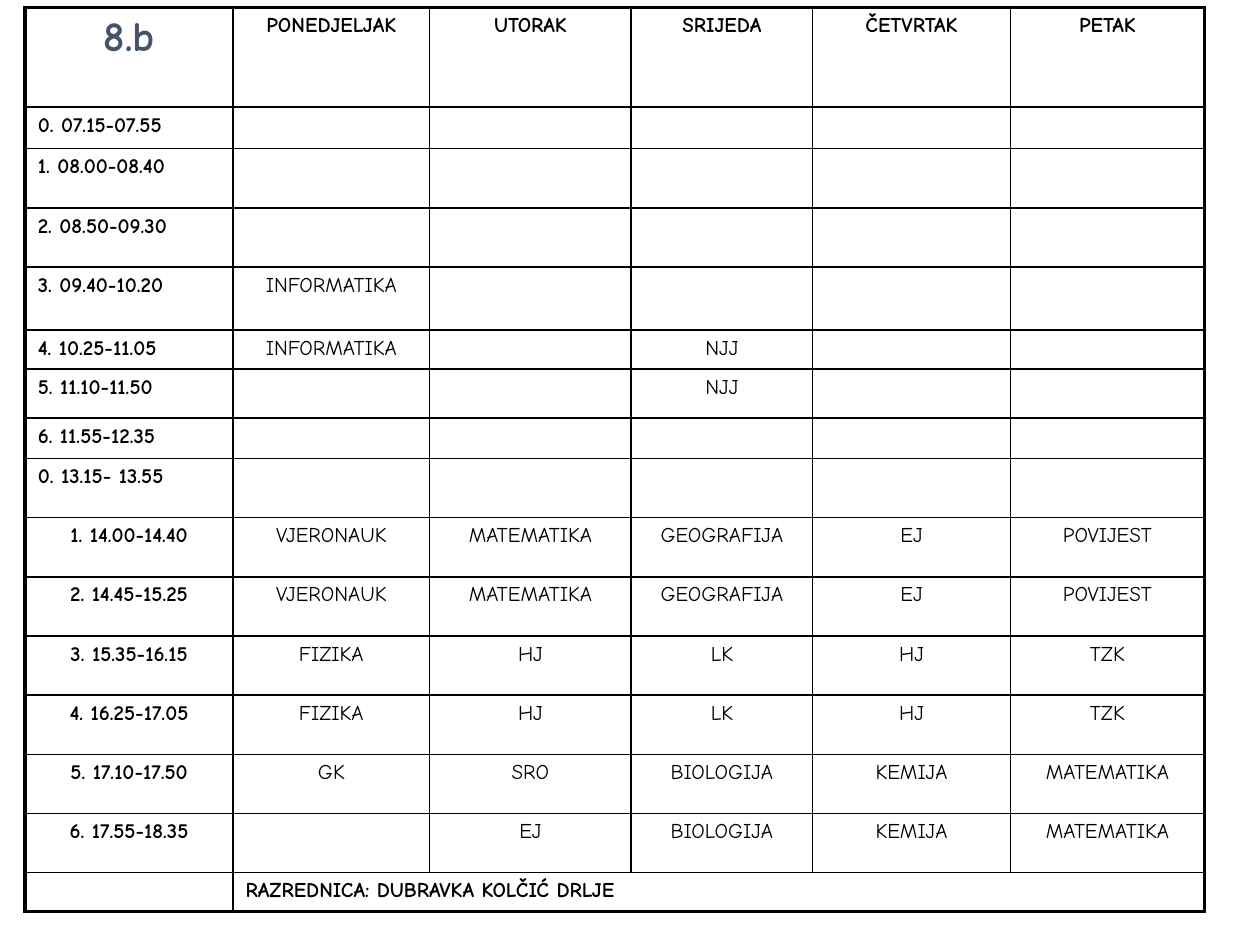
from lxml import etree
from pptx import Presentation
from pptx import util as u
from pptx.dml.color import RGBColor
from pptx.enum import text
from pptx.oxml import ns

FONT = "Comic Neue"
BLACK = "000000"
SLATE = "44546A"
THIN, THICK = 1, 2.25

COLUMN_WIDTHS = [1.65, 1.56, 1.6, 1.44, 1.57, 1.54]
ROW_HEIGHTS = [0.79, 0.33, 0.47, 0.47, 0.5, 0.31, 0.39, 0.32] + [0.47] * 7 + [0.31]

TIMETABLE = [
    ["8.b", "PONEDJELJAK", "UTORAK", "SRIJEDA", "ČETVRTAK", "PETAK"],
    ["0. 07.15-07.55", "", "", "", "", ""],
    ["1. 08.00-08.40", "", "", "", "", ""],
    ["2. 08.50-09.30", "", "", "", "", ""],
    ["3. 09.40-10.20", "INFORMATIKA", "", "", "", ""],
    ["4. 10.25-11.05", "INFORMATIKA", "", "NJJ", "", ""],
    ["5. 11.10-11.50", "", "", "NJJ", "", ""],
    ["6. 11.55-12.35", "", "", "", "", ""],
    ["0. 13.15- 13.55", "", "", "", "", ""],
    ["1. 14.00-14.40", "VJERONAUK", "MATEMATIKA", "GEOGRAFIJA", "EJ", "POVIJEST"],
    ["2. 14.45-15.25", "VJERONAUK", "MATEMATIKA", "GEOGRAFIJA", "EJ", "POVIJEST"],
    ["3. 15.35-16.15", "FIZIKA", "HJ", "LK", "HJ", "TZK"],
    ["4. 16.25-17.05", "FIZIKA", "HJ", "LK", "HJ", "TZK"],
    ["5. 17.10-17.50", "GK", "SRO", "BIOLOGIJA", "KEMIJA", "MATEMATIKA"],
    ["6. 17.55-18.35", "", "EJ", "BIOLOGIJA", "KEMIJA", "MATEMATIKA"],
    ["", "RAZREDNICA: DUBRAVKA KOLČIĆ DRLJE", "", "", "", ""],
]
LAST_ROW = len(TIMETABLE) - 1
LAST_COLUMN = len(COLUMN_WIDTHS) - 1
FIRST_AFTERNOON_LESSON = 9


def color(hex_string):
    return RGBColor.from_string(hex_string)


class TimetableSlide:
    def __init__(self, presentation, font):
        self.slide = presentation.slides.add_slide(presentation.slide_layouts[6])
        self.font = font

    def table(self, left, top, widths, heights):
        frame = self.slide.shapes.add_table(
            len(heights), len(widths), u.Inches(left), u.Inches(top),
            u.Inches(sum(widths)), u.Inches(sum(heights)))
        table = frame.table
        table.first_row = table.horz_banding = False
        for column, width in zip(table.columns, widths):
            column.width = u.Inches(width)
        for row, height in zip(table.rows, heights):
            row.height = u.Inches(height)
        return table

    def cell_text(self, cell, words, size, bold, hex_color, centered):
        paragraph = cell.text_frame.paragraphs[0]
        paragraph.alignment = text.PP_ALIGN.CENTER if centered else text.PP_ALIGN.LEFT
        if not words:
            # Small end mark, so that empty cells do not stretch their row
            end = etree.SubElement(paragraph._p, ns.qn("a:endParaRPr"))
            end.set("sz", str(size * 100))
            return
        run = paragraph.add_run()
        run.text = words
        run.font.name = self.font
        run.font.size = u.Pt(size)
        run.font.bold = bold
        run.font.color.rgb = color(hex_color)

    def borders(self, cell, sides):
        properties = cell._tc.get_or_add_tcPr()
        for side, width in sides.items():
            line = etree.SubElement(properties, ns.qn(f"a:ln{side}"), w=str(u.Pt(width)))
            fill = etree.SubElement(line, ns.qn("a:solidFill"))
            etree.SubElement(fill, ns.qn("a:srgbClr"), val=BLACK)
        cell.fill.background()


def main():
    presentation = Presentation()
    presentation.slide_width = u.Inches(10)
    presentation.slide_height = u.Inches(7.5)
    page = TimetableSlide(presentation, FONT)
    table = page.table(0.2, 0.06, COLUMN_WIDTHS, ROW_HEIGHTS)

    # Class teacher's name runs across the five days
    table.cell(LAST_ROW, 1).merge(table.cell(LAST_ROW, LAST_COLUMN))

    for r, row in enumerate(TIMETABLE):
        for c, words in enumerate(row):
            cell = table.cell(r, c)
            corner = r == 0 and c == 0
            morning_time = c == 0 and 0 < r < FIRST_AFTERNOON_LESSON
            page.cell_text(cell, words,
                           size=24 if corner else 12,
                           bold=r in (0, LAST_ROW) or c == 0,
                           hex_color=SLATE if corner else BLACK,
                           centered=not morning_time and r != LAST_ROW)

            # Thick outer frame, thin inner lines
            right_edge = c == LAST_COLUMN or cell.is_merge_origin
            sides = {
                "L": THICK if c == 0 else THIN,
                "R": THICK if right_edge else THIN,
                "T": THICK if r == 0 else THIN,
                "B": THICK if r == LAST_ROW else THIN,
            }
            if cell.is_spanned:
                del sides["L"]
                if c < LAST_COLUMN:
                    del sides["R"]
            page.borders(cell, sides)

    presentation.save("out.pptx")


if __name__ == "__main__":
    main()
